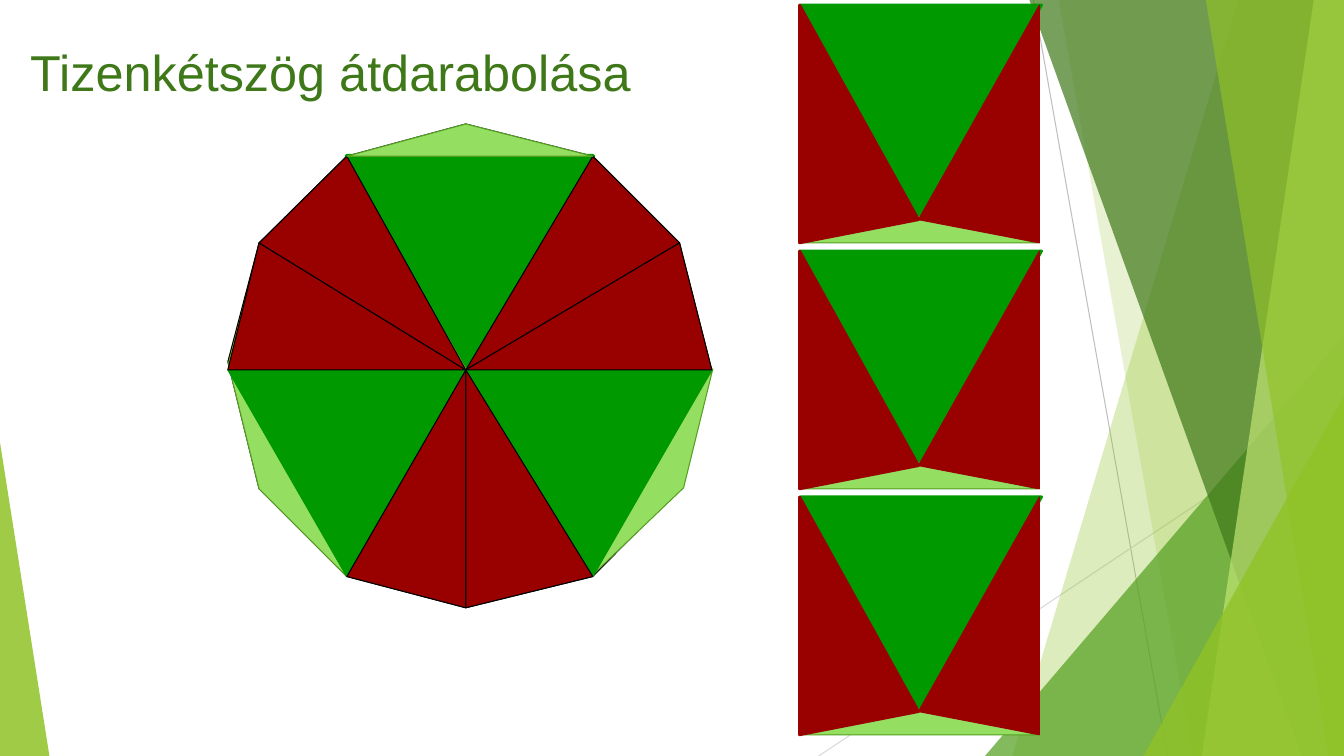
import pptx
import pptx.util
import pptx.dml.color
import pptx.enum.shapes
import pptx.enum.text
import pptx.oxml.ns
import lxml.etree

Inches = pptx.util.Inches
TITLE = "Tizenkétszög átdarabolása"
COLORS = {
    "lime": "90C226", "leaf": "54A021", "forest": "3F7819", "pale": "C0E474",
    "light": "94DE61", "green": "009900", "red": "990000", "black": "000000",
    "gray": "BFBFBF", "silver": "D9D9D9",
}

# Background: from, to, colour
RAYS = [((10.25, 0), (11.58, 7.5), "gray"), ((13.33, 4.03), (8.12, 7.5), "silver")]
# Bands run to the right edge: top left x, bottom left x, colour, opacity %
# Wedges: left, top, width, height, apex position, colour, opacity %
BACKDROP = [
    ("band", (12.28, 10.04), "lime", 30),
    ("band", (10.5, 11.83), "lime", 20),
    ("wedge", (9.77, 3.33, 3.56, 4.17, 1), "leaf", 72),
    ("band", (10.21, 12.91), "forest", 70),
    ("band", (13.03, 11.92), "pale", 70),
    ("band", (11.96, 13.18), "lime", 65),
    ("wedge", (11.34, 3.93, 1.99, 3.57, 1), "lime", 80),
    ("wedge", (0, 4.39, 0.49, 3.11, 0), "lime", 85),
]
SLIDE_RIGHT, SLIDE_BOTTOM = 13.33, 7.5

# Dodecagon corners, clockwise from the top
RING = [
    (4.62, 1.23), (5.88, 1.55), (6.74, 2.41), (7.06, 3.67), (6.74, 4.85), (5.88, 5.72),
    (4.62, 6.03), (3.44, 5.72), (2.57, 4.85), (2.26, 3.59), (2.57, 2.41), (3.44, 1.55),
]
CENTER, WEST = (4.62, 3.67), (2.26, 3.67)

# Pieces: corners, fill, line, line width
DODECAGON = [
    (RING, "lime", "black", 0.75),
    ([(7.07, 3.66), (6.78, 4.84), (5.85, 5.73)], "light", "leaf", 0.75),
    ([RING[9], RING[8], RING[7]], "light", "leaf", 0.75),
    ([RING[11], RING[1], (4.66, 3.67)], "green", "green", 3.25),
    ([WEST, CENTER, RING[7]], "green", "green", 0.75),
    ([CENTER, RING[5], RING[3]], "green", "green", 0.75),
] + [
    ([CENTER, first, second], "red", "black", 0.75)
    for first, second in [
        (RING[7], RING[6]), (RING[6], RING[5]), (WEST, RING[10]),
        (RING[10], RING[11]), (RING[1], RING[2]), (RING[3], RING[2]),
    ]
]
TOP_CAP = ([RING[11], RING[0], RING[1]], "light", "leaf", 0.75)

# One square, with heights measured from its top edge
SQUARE = [
    ([(7.94, 0), (10.33, 0), (9.14, 2.16)], "green", "green", 2),
    ([(9.11, 2.1), (7.93, 2.36), (10.29, 2.36)], "light", "leaf", 0.75),
    ([(7.93, 2.36), (7.93, 0), (9.11, 2.13)], "red", "red", 2),
    ([(9.11, 2.13), (10.31, 0), (10.31, 2.36)], "red", "red", 0.75),
]
SQUARE_COUNT, SQUARE_TOP, SQUARE_STEP = 3, 0.05, 2.44


def rgb(name):
    return pptx.dml.color.RGBColor.from_string(COLORS[name])


def paint(shape, fill, line=None, width=0, opacity=100):
    shape.shadow.inherit = False
    shape.fill.solid()
    shape.fill.fore_color.rgb = rgb(fill)
    if opacity < 100:
        tint = shape._element.spPr.find(".//" + pptx.oxml.ns.qn("a:srgbClr"))
        alpha = lxml.etree.SubElement(tint, pptx.oxml.ns.qn("a:alpha"))
        alpha.set("val", str(opacity * 1000))
    if line:
        shape.line.color.rgb = rgb(line)
        shape.line.width = pptx.util.Pt(width)
    else:
        shape.line.fill.background()


def add_polygon(page, corners):
    points = [(Inches(x), Inches(y)) for x, y in corners]
    builder = page.shapes.build_freeform(*points[0], scale=1.0)
    builder.add_line_segments(points[1:], close=True)
    return builder.convert_to_shape()


def add_piece(page, corners, fill, line, width, down=0):
    moved = [(x, y + down) for x, y in corners]
    paint(add_polygon(page, moved), fill, line, width)


def add_backdrop(page):
    for start, end, color in RAYS:
        ray = page.shapes.add_connector(
            pptx.enum.shapes.MSO_CONNECTOR.STRAIGHT, *map(Inches, start + end))
        ray.line.color.rgb = rgb(color)
        ray.line.width = pptx.util.Pt(0.75)
        lxml.etree.SubElement(ray._element.spPr, pptx.oxml.ns.qn("a:effectLst"))
    for kind, place, color, opacity in BACKDROP:
        if kind == "band":
            top_x, bottom_x = place
            shape = add_polygon(page, [
                (top_x, 0), (SLIDE_RIGHT, 0),
                (SLIDE_RIGHT, SLIDE_BOTTOM), (bottom_x, SLIDE_BOTTOM)])
        else:
            *frame, apex = place
            shape = page.shapes.add_shape(
                pptx.enum.shapes.MSO_SHAPE.ISOSCELES_TRIANGLE, *map(Inches, frame))
            shape.adjustments[0] = apex
        paint(shape, color, opacity=opacity)


def add_title(page):
    title = page.shapes.title
    frame = {"left": 0.2, "top": 0.33, "width": 7.46, "height": 0.76}
    for name, value in frame.items():
        setattr(title, name, Inches(value))
    title.text_frame.text = TITLE
    title.text_frame.word_wrap = True
    title.text_frame.vertical_anchor = pptx.enum.text.MSO_ANCHOR.MIDDLE
    para = title.text_frame.paragraphs[0]
    para.alignment = pptx.enum.text.PP_ALIGN.LEFT
    font = para.runs[0].font
    for name, value in {"name": "Arial", "size": pptx.util.Pt(36)}.items():
        setattr(font, name, value)
    font.color.rgb = rgb("forest")


def main():
    deck = pptx.Presentation()
    deck.slide_width, deck.slide_height = Inches(SLIDE_RIGHT), Inches(SLIDE_BOTTOM)
    page = deck.slides.add_slide(deck.slide_layouts[5])
    add_backdrop(page)
    for piece in DODECAGON:
        add_piece(page, *piece)
    for index in range(SQUARE_COUNT):
        for piece in SQUARE:
            add_piece(page, *piece, down=SQUARE_TOP + index * SQUARE_STEP)
    add_piece(page, *TOP_CAP)
    add_title(page)
    deck.save("out.pptx")


if __name__ == "__main__":
    main()
